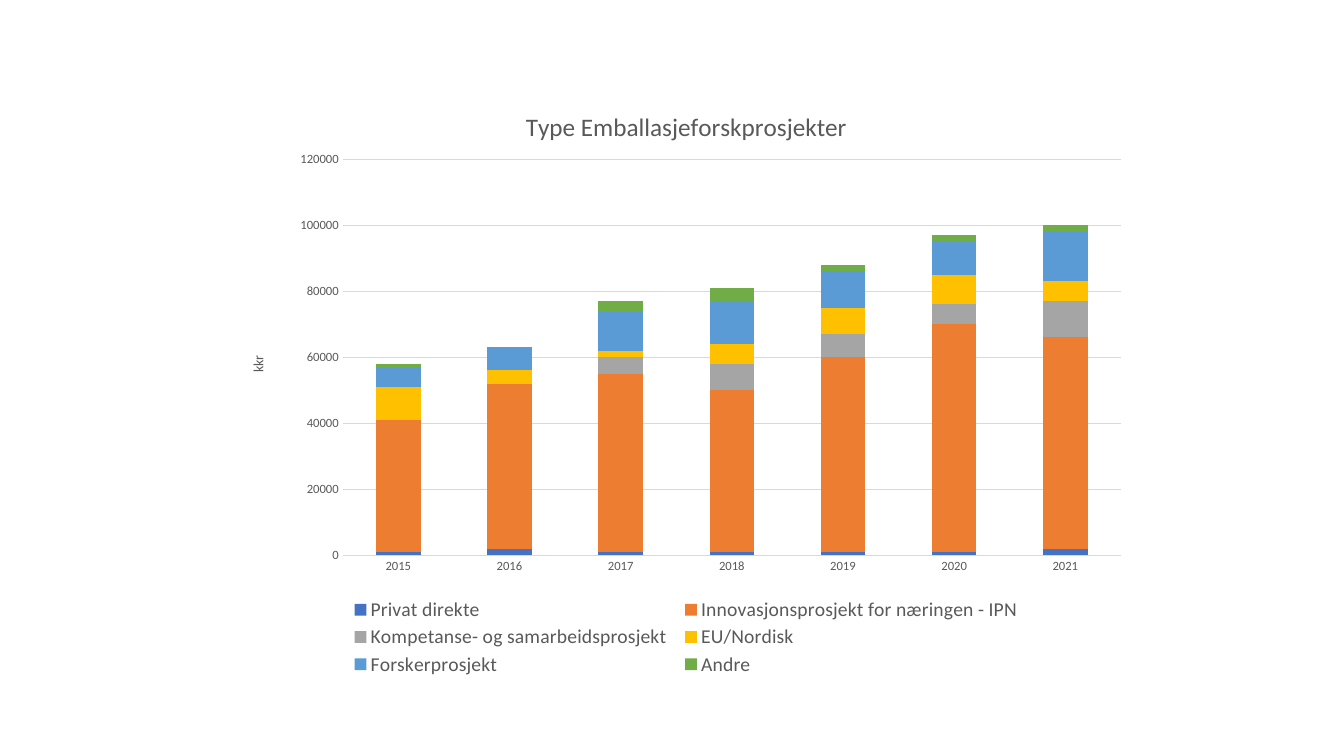
from dataclasses import dataclass

from lxml import etree
from pptx import Presentation
from pptx.chart.data import CategoryChartData
from pptx.dml.color import RGBColor
from pptx.enum.chart import XL_CHART_TYPE, XL_LEGEND_POSITION, XL_TICK_MARK
from pptx.oxml.ns import qn
from pptx.util import Inches, Pt

STACKED = XL_CHART_TYPE.COLUMN_STACKED
BOTTOM = XL_LEGEND_POSITION.BOTTOM
NO_TICK = XL_TICK_MARK.NONE
BLANK_LAYOUT = 6

YEARS = [str(year) for year in range(2015, 2022)]
FUNDING = {  # kkr per year
    "Privat direkte": (1000, 2000, 1000, 1000, 1000, 1000, 2000),
    "Innovasjonsprosjekt for næringen - IPN":
        (40000, 50000, 54000, 49000, 59000, 69000, 64000),
    "Kompetanse- og samarbeidsprosjekt": (0, 0, 5000, 8000, 7000, 6000, 11000),
    "EU/Nordisk": (10000, 4000, 2000, 6000, 8000, 9000, 6000),
    "Forskerprosjekt": (6000, 7000, 12000, 13000, 11000, 10000, 15000),
    "Andre": (1000, 0, 3000, 4000, 2000, 2000, 2000),
}


@dataclass(frozen=True)
class Theme:
    font: str = "Calibri"
    text: str = "595959"
    rule: str = "D9D9D9"
    series: tuple = ("4472C4", "ED7D31", "A5A5A5", "FFC000", "5B9BD5", "70AD47")
    title_size: float = 18
    legend_size: float = 14
    label_size: float = 10
    tick_size: float = 9
    rule_width: float = 0.75


class ChartPage:
    def __init__(self, deck, theme):
        self.deck = deck
        self.theme = theme
        self.page = deck.slides.add_slide(deck.slide_layouts[BLANK_LAYOUT])

    def style_font(self, font, size):
        formats = {"name": self.theme.font, "size": Pt(size), "bold": False}
        for name, value in formats.items():
            setattr(font, name, value)
        font.color.rgb = RGBColor.from_string(self.theme.text)

    def style_rule(self, line):
        line.color.rgb = RGBColor.from_string(self.theme.rule)
        line.width = Pt(self.theme.rule_width)

    def place(self, element, **shares):
        """Fix a chart part at shares (x, y, w, h) of the chart's size."""
        for old in element.findall(qn("c:layout")):
            element.remove(old)
        layout = etree.Element(qn("c:layout"))
        manual = etree.SubElement(layout, qn("c:manualLayout"))
        if element.tag == qn("c:plotArea"):
            etree.SubElement(manual, qn("c:layoutTarget")).set("val", "inner")
        for mode in ("xMode", "yMode"):
            etree.SubElement(manual, qn(f"c:{mode}")).set("val", "edge")
        for name, share in shares.items():
            etree.SubElement(manual, qn(f"c:{name}")).set("val", str(share))
        overlay = element.find(qn("c:overlay"))
        if overlay is None:
            element.insert(0, layout)
        else:
            overlay.addprevious(layout)

    def write_title(self, title, text, size, x, y):
        para = title.text_frame.paragraphs[0]
        span = para.add_run()
        span.text = text
        self.style_font(span.font, size)
        self.place(title._element, x=x, y=y)

    def add_stacked_columns(self, categories, series, left, top, width, height):
        """Add a stacked column chart; lengths are percentages of the slide."""
        data = CategoryChartData()
        data.categories = categories
        for name, values in series.items():
            data.add_series(name, values)
        across, down = self.deck.slide_width / 100, self.deck.slide_height / 100
        frame = self.page.shapes.add_chart(
            STACKED, round(left * across), round(top * down),
            round(width * across), round(height * down), data)
        chart = frame.chart
        self.style_font(chart.font, self.theme.label_size)
        plot = chart.plots[0]
        for name, value in {"gap_width": 150, "overlap": 100,
                            "vary_by_categories": False}.items():
            setattr(plot, name, value)
        for bars, color in zip(plot.series, self.theme.series):
            bars.format.fill.solid()
            bars.format.fill.fore_color.rgb = RGBColor.from_string(color)
        self.place(chart._chartSpace.chart.plotArea, x=0.13, y=0.135, w=0.85, h=0.655)
        return chart

    def style_axes(self, chart, value_title):
        for axis in (chart.category_axis, chart.value_axis):
            axis.major_tick_mark = axis.minor_tick_mark = NO_TICK
            self.style_font(axis.tick_labels.font, self.theme.tick_size)
        self.style_rule(chart.category_axis.format.line)
        values = chart.value_axis
        for name, value in {"minimum_scale": 0, "maximum_scale": 120000,
                            "major_unit": 20000}.items():
            setattr(values, name, value)
        values.format.line.fill.background()
        self.style_rule(values.major_gridlines.format.line)
        self.write_title(values.axis_title, value_title,
                         self.theme.label_size, x=0.025, y=0.455)
        body = values.axis_title.text_frame._txBody.bodyPr
        for name, value in {"rot": "-5400000", "vert": "horz"}.items():
            body.set(name, value)

    def add_legend(self, chart):
        chart.has_legend = True
        legend = chart.legend
        legend.position = BOTTOM
        legend.include_in_layout = False
        self.style_font(legend.font, self.theme.legend_size)
        self.place(legend._element, x=0.13, y=0.855, w=0.75, h=0.14)


def main():
    deck = Presentation()
    deck.slide_width, deck.slide_height = Inches(13.33), Inches(7.5)
    theme = Theme()
    page = ChartPage(deck, theme)
    chart = page.add_stacked_columns(YEARS, FUNDING, left=16.65, top=10.27,
                                     width=68.12, height=80)
    chart.has_title = True
    page.write_title(chart.chart_title, "Type Emballasjeforskprosjekter",
                     theme.title_size, x=0.325, y=0.045)
    page.style_axes(chart, "kkr")
    page.add_legend(chart)
    deck.save("out.pptx")


if __name__ == "__main__":
    main()
